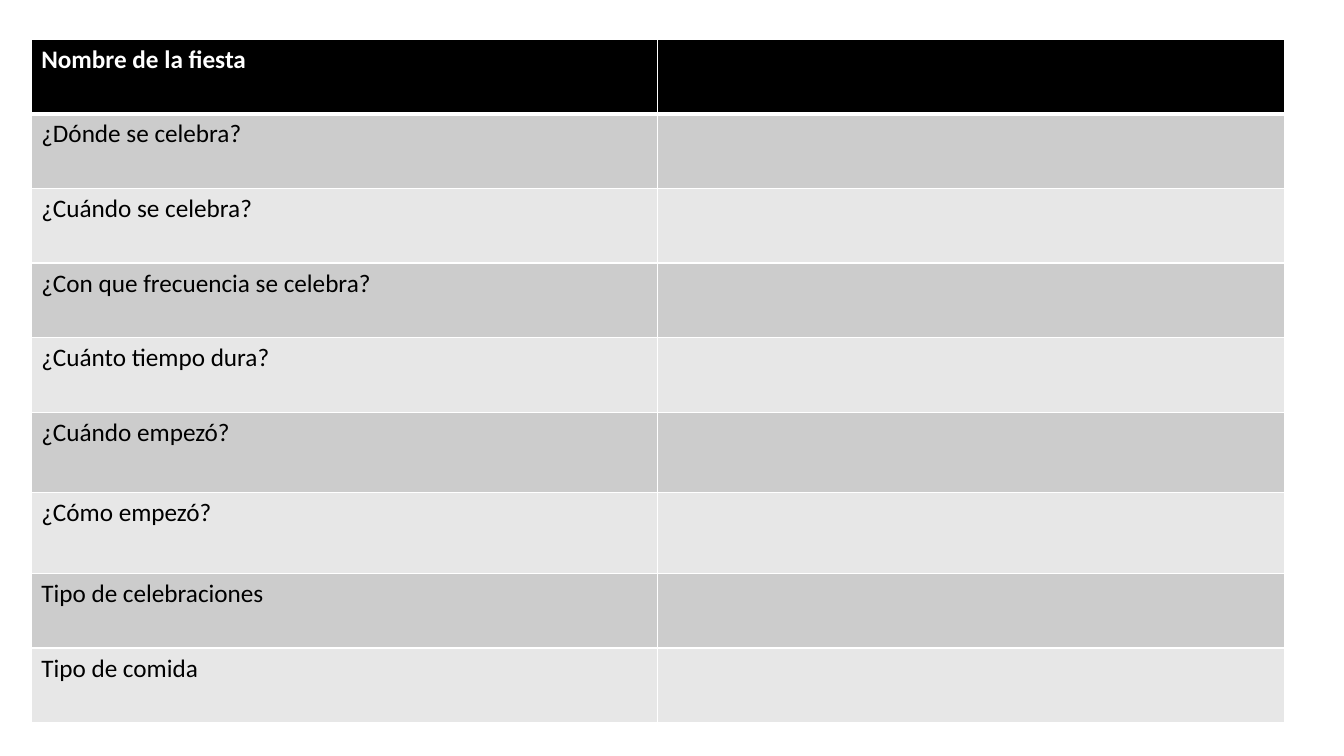
from dataclasses import dataclass

from lxml import etree
from pptx import Presentation
from pptx.dml.color import RGBColor
from pptx.oxml.ns import qn
from pptx.util import Inches, Pt


@dataclass(frozen=True)
class Theme:
    font: str = "Calibri"
    text_size: int = 18
    header_fill: str = "000000"
    header_text: str = "FFFFFF"
    body_text: str = "000000"
    bands: tuple = ("CCCCCC", "E7E7E7")
    border: str = "FFFFFF"
    thin: int = 1
    thick: int = 3


THEME = Theme()
BLANK_LAYOUT = 6

# Each prompt with its row height in inches
PROMPTS = [
    ("Nombre de la fiesta", 0.74),
    ("¿Dónde se celebra?", 0.74),
    ("¿Cuándo se celebra?", 0.74),
    ("¿Con que frecuencia se celebra?", 0.74),
    ("¿Cuánto tiempo dura?", 0.74),
    ("¿Cuándo empezó?", 0.8),
    ("¿Cómo empezó?", 0.8),
    ("Tipo de celebraciones", 0.74),
    ("Tipo de comida", 0.74),
]


def set_borders(cell, top, bottom):
    properties = cell._tc.get_or_add_tcPr()
    widths = {"lnL": THEME.thin, "lnR": THEME.thin, "lnT": top, "lnB": bottom}
    for side, width in widths.items():
        line = etree.SubElement(properties, qn(f"a:{side}"), w=str(Pt(width)))
        fill = etree.SubElement(line, qn("a:solidFill"))
        etree.SubElement(fill, qn("a:srgbClr"), val=THEME.border)


def style_cell(cell, row):
    # The heavy rule lies between the header and the first question
    set_borders(cell,
                top=THEME.thick if row == 1 else THEME.thin,
                bottom=THEME.thick if row == 0 else THEME.thin)
    band = THEME.bands[(row - 1) % len(THEME.bands)]
    cell.fill.solid()
    cell.fill.fore_color.rgb = RGBColor.from_string(
        THEME.header_fill if row == 0 else band)
    # Blank answers keep the same type size as the prompts
    cell.text_frame.paragraphs[0].font.size = Pt(THEME.text_size)


def write_prompt(cell, prompt, is_header):
    run = cell.text_frame.paragraphs[0].add_run()
    run.text = prompt
    run.font.name = THEME.font
    run.font.size = Pt(THEME.text_size)
    run.font.bold = is_header
    run.font.color.rgb = RGBColor.from_string(
        THEME.header_text if is_header else THEME.body_text)


def add_fiesta_table(slide, left, top, width):
    height = sum(row_height for _, row_height in PROMPTS)
    fiesta = slide.shapes.add_table(
        len(PROMPTS), 2, Inches(left), Inches(top),
        Inches(width), Inches(height)).table

    # Prompts on the left, space for answers on the right
    for column in fiesta.columns:
        column.width = Inches(width / 2)
    for row, (prompt, row_height) in enumerate(PROMPTS):
        fiesta.rows[row].height = Inches(row_height)
        for cell in fiesta.rows[row].cells:
            style_cell(cell, row)
        write_prompt(fiesta.cell(row, 0), prompt, is_header=row == 0)


def main():
    deck = Presentation()
    deck.slide_width = Inches(13.33)
    deck.slide_height = Inches(7.5)
    slide = deck.slides.add_slide(deck.slide_layouts[BLANK_LAYOUT])
    add_fiesta_table(slide, left=0.31, top=0.39, width=12.43)
    deck.save("out.pptx")


if __name__ == "__main__":
    main()
